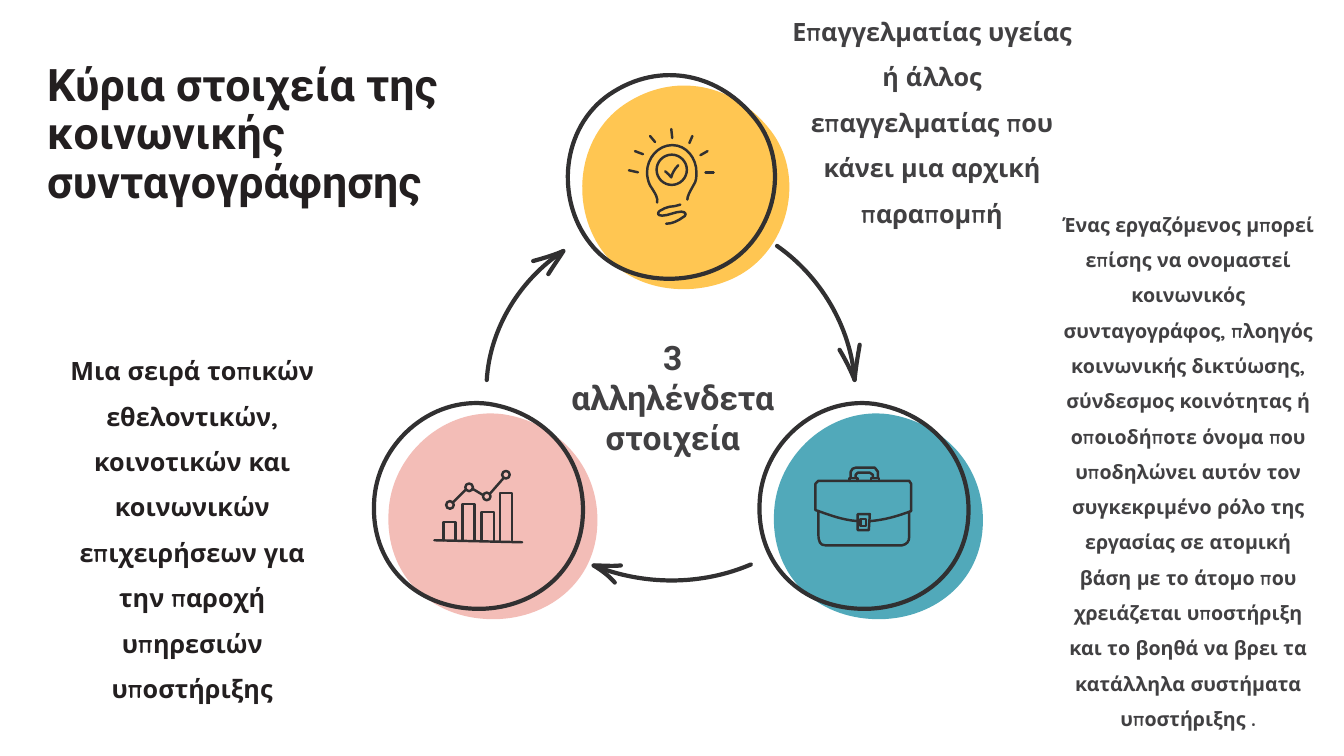
import math

from lxml import etree
from pptx import Presentation, util as u
from pptx.dml.color import RGBColor
from pptx.enum import text as t
from pptx.oxml.ns import qn

COLOURS = {"ink": "313031", "title": "231F20", "body": "414042",
           "teal": "51A9BA", "pink": "F3BDB7", "yellow": "FFC652"}

# Texts: wording, box in cm, top and bottom inset in cm, font, size, colour,
# alignment, anchor, line spacing, space before
TOP, MIDDLE = t.MSO_ANCHOR.TOP, t.MSO_ANCHOR.MIDDLE
LEFT, CENTER = t.PP_ALIGN.LEFT, t.PP_ALIGN.CENTER
TEXTS = [
    ("Κύρια στοιχεία της κοινωνικής συνταγογράφησης",
     (0.94, 1.45, 11.3, 4.88), (0.13, 0.13), "Roboto", 32, "title", LEFT, TOP, 0.9, 10),
    ("Μια σειρά τοπικών εθελοντικών, κοινοτικών και κοινωνικών επιχειρήσεων "
     "για την παροχή υπηρεσιών υποστήριξης",
     (1.16, 11.1, 7.37, 4.11), (0.13, 0.13), "Quicksand", 18, "title", CENTER, MIDDLE, 1.5, 10),
    ("Επαγγελματίας υγείας ή άλλος επαγγελματίας που κάνει μια αρχική παραπομπή",
     (19.53, 0.53, 7.92, 4.88), (0.13, 0.29), "Quicksand", 18, "body", CENTER, MIDDLE, 1.5, 10),
    ("Ένας εργαζόμενος μπορεί επίσης να ονομαστεί κοινωνικός συνταγογράφος, "
     "πλοηγός κοινωνικής δικτύωσης, σύνδεσμος κοινότητας ή οποιοδήποτε όνομα "
     "που υποδηλώνει αυτόν τον συγκεκριμένο ρόλο της εργασίας σε ατομική βάση "
     "με το άτομο που χρειάζεται υποστήριξη και το βοηθά να βρει τα κατάλληλα "
     "συστήματα υποστήριξης .",
     (26.48, 6.32, 6.93, 9.53), (1.43, 0.13), "Quicksand", 14, "body", CENTER, MIDDLE, 1.5, 10),
    ("3 αλληλένδετα στοιχεία",
     (13.96, 8.35, 5.99, 3.33), (0.13, 0.13), "Roboto", 24, "body", CENTER, TOP, 1.0, 0),
]

# Drawing units: 0.0254 cm. Stroke kinds: L line, Z closed line,
# C Bézier curve, O closed Bézier curve, R ring (centre x, centre y, radius)
UNIT = 0.0254
LOWER_BLOB = ("O", [(882, 411), (939, 420), (979, 466), (975, 524), (971, 583), (919, 618),
                    (863, 614), (806, 610), (765, 568), (768, 509), (770, 452), (823, 403),
                    (882, 411)])
UPPER_BLOB = ("O", [(600, 252), (632, 294), (702, 297), (743, 267), (785, 236), (797, 172),
                    (765, 130), (729, 83), (669, 70), (619, 104), (571, 137), (565, 208),
                    (600, 252)])
BLOBS = [(LOWER_BLOB, 0, "teal"), (LOWER_BLOB, -382.5, "pink"), (UPPER_BLOB, 0, "yellow")]
OUTLINE_SHIFT = (-14.3, -10.3)

# Shaft and head of each arrow
ARROWS = [
    ("C", [(483, 377), (486, 326), (516, 277), (559, 249)]),
    ("C", [(529, 259), (540, 256), (550, 253), (559, 249), (554, 257), (549, 264), (544, 272)]),
    ("C", [(771, 244), (814, 274), (844, 324), (848, 377)]),
    ("C", [(833, 347), (839, 357), (844, 367), (848, 377), (849, 365), (851, 354), (853, 342)]),
    ("C", [(745, 560), (696, 581), (639, 581), (589, 561)]),
    ("C", [(610, 578), (604, 571), (597, 566), (589, 561), (598, 561), (607, 562), (616, 561)]),
]

RAYS = [[(633, 171), (624, 169)], [(638, 153), (630, 150)], [(650, 141), (645, 135)],
        [(667, 137), (666, 128)], [(687, 135), (684, 142)], [(702, 150), (695, 154)],
        [(708, 171), (700, 171)]]
BULB = [
    ("C", [(652, 201), (653, 197), (651, 193), (645, 184), (643, 180), (642, 175), (642, 171),
           (642, 157), (653, 144), (667, 144), (681, 144), (691, 157), (691, 171), (691, 175),
           (691, 180), (688, 184), (684, 191), (682, 195), (682, 198)]),
    ("C", [(675, 203), (672, 204), (668, 205), (665, 205), (661, 206), (658, 207), (655, 209),
           (652, 211), (652, 214), (657, 214), (663, 214), (670, 210), (676, 210), (681, 210),
           (682, 214), (677, 216), (673, 219), (667, 222), (661, 222)]),
    ("C", [(660, 170), (663, 172), (664, 174), (666, 176), (667, 172), (669, 168), (673, 164)]),
    ("R", (666.5, 168.5, 15)),
] + [("L", ray) for ray in RAYS]

BASE = 536
BARS = [(440, 452, 518), (459, 471, 500), (478, 490, 508), (496, 508, 489)]
MARKERS = [(446.5, 501), (465.5, 483.5), (483, 492.5), (502, 471)]
LINKS = [[(449, 499), (462, 486)], [(469, 485), (479, 491)], [(486, 490), (500, 474)]]
TREND = ([("L", [(431, BASE), (518, BASE + 2)])]
         + [("L", [(r, BASE), (r, top), (l, top), (l, BASE)]) for l, r, top in BARS]
         + [("R", (x, y, 3.8)) for x, y in MARKERS]
         + [("L", link) for link in LINKS])

BRIEFCASE = [
    ("C", [(851, 517), (836, 516), (823, 511), (809, 506)]),
    ("L", [(809, 506), (809, 480), (812, 477), (902, 477), (904, 480), (904, 507)]),
    ("C", [(904, 507), (891, 512), (877, 516), (863, 517)]),
    ("Z", [(851, 510), (863, 510), (862, 526), (851, 526)]),
    ("Z", [(854, 515), (859, 515), (859, 522), (854, 522)]),
    ("L", [(843, 477), (843, 474), (851, 474), (851, 477)]),
    ("L", [(864, 477), (864, 474), (872, 474), (872, 477)]),
    ("L", [(849, 474), (849, 471), (851, 469), (863, 469), (866, 471), (866, 473)]),
    ("L", [(844, 474), (844, 468), (846, 465), (849, 464), (864, 464), (868, 464),
           (871, 468), (871, 473)]),
    ("C", [(812, 507), (812, 515), (812, 522), (812, 530), (812, 538), (814, 541), (819, 541),
           (845, 541), (870, 541), (895, 541), (900, 540), (902, 537), (902, 533),
           (902, 525), (902, 516), (902, 508)]),
]


def control_points(kind, data):
    """Points of a stroke; a ring becomes four cubic curves."""
    if kind != "R":
        return data
    x, y, r = data
    k = 0.55 * r
    points = [(x + r, y)]
    for quarter in range(4):
        c, s = round(math.cos(quarter * math.pi / 2)), round(math.sin(quarter * math.pi / 2))
        points += [(x + c * a - s * b, y + s * a + c * b) for a, b in ((r, k), (k, r), (0, r))]
    return points


def bend(figure, strokes):
    """Turn each three line ends of a curved stroke into one cubic curve."""
    outline = figure.element.find(".//" + qn("a:path"))
    kinds = iter([kind for kind, _ in strokes])
    curved, curve = False, None
    for step in list(outline):
        if step.tag == qn("a:moveTo"):
            curved, curve = next(kinds) in "COR", None
        elif step.tag == qn("a:lnTo") and curved:
            if curve is None or len(curve) == 3:
                curve = etree.Element(qn("a:cubicBezTo"))
                step.addprevious(curve)
            curve.append(step[0])
            outline.remove(step)


def draw(slide, strokes, fill=None, width=None, shift=(0, 0)):
    """Draw all strokes as one freeform."""
    builder = None
    for kind, data in strokes:
        points = [(u.Cm((x + shift[0]) * UNIT), u.Cm((y + shift[1]) * UNIT))
                  for x, y in control_points(kind, data)]
        if builder is None:
            builder = slide.shapes.build_freeform(*points[0])
        else:
            builder.move_to(*points[0])
        builder.add_line_segments(points[1:], close=kind in "ZOR")
    figure = builder.convert_to_shape()
    bend(figure, strokes)
    figure.shadow.inherit = False
    if fill:
        figure.fill.solid()
        figure.fill.fore_color.rgb = RGBColor.from_string(COLOURS[fill])
    else:
        figure.fill.background()
    if width:
        figure.line.width = u.Pt(width)
        figure.line.color.rgb = RGBColor.from_string(COLOURS["ink"])
        figure.element.spPr.find(qn("a:ln")).set("cap", "rnd")
    else:
        figure.line.fill.background()


def write(slide, wording, box, insets, font, size, colour, align, anchor, spacing, before):
    frame = slide.shapes.add_textbox(*map(u.Cm, box)).text_frame
    paragraph = frame.paragraphs[0]
    run = paragraph.add_run()
    formats = [
        (frame, {"word_wrap": True, "vertical_anchor": anchor,
                 "margin_top": u.Cm(insets[0]), "margin_bottom": u.Cm(insets[1])}),
        (paragraph, {"alignment": align, "line_spacing": spacing, "space_before": u.Pt(before)}),
        (run, {"text": wording}),
        (run.font, {"name": font, "size": u.Pt(size), "bold": True}),
        (run.font.color, {"rgb": RGBColor.from_string(COLOURS[colour])}),
    ]
    for target, values in formats:
        for key, value in values.items():
            setattr(target, key, value)


def main():
    deck = Presentation()
    deck.slide_width, deck.slide_height = u.Cm(33.87), u.Cm(19.05)
    slide = deck.slides.add_slide(deck.slide_layouts[6])
    # Coloured discs, then their offset outlines
    for blob, dx, colour in BLOBS:
        draw(slide, [blob], fill=colour, shift=(dx, 0))
    for blob, dx, _ in BLOBS:
        draw(slide, [blob], width=3, shift=(dx + OUTLINE_SHIFT[0], OUTLINE_SHIFT[1]))
    # Cycle arrows and icons
    for stroke in ARROWS:
        draw(slide, [stroke], width=3)
    for icon in (BULB, TREND, BRIEFCASE):
        draw(slide, icon, width=1.75)
    # Texts
    for entry in TEXTS:
        write(slide, *entry)
    deck.save("out.pptx")


if __name__ == "__main__":
    main()
